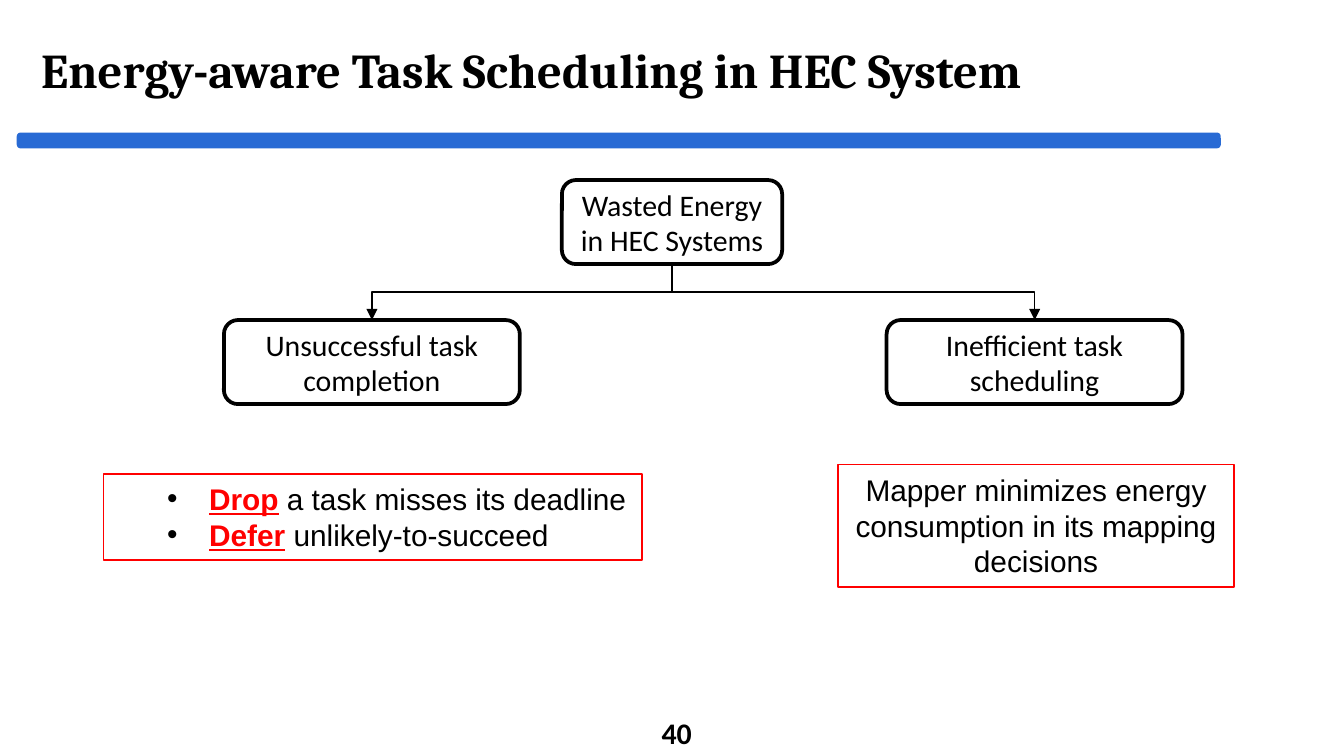
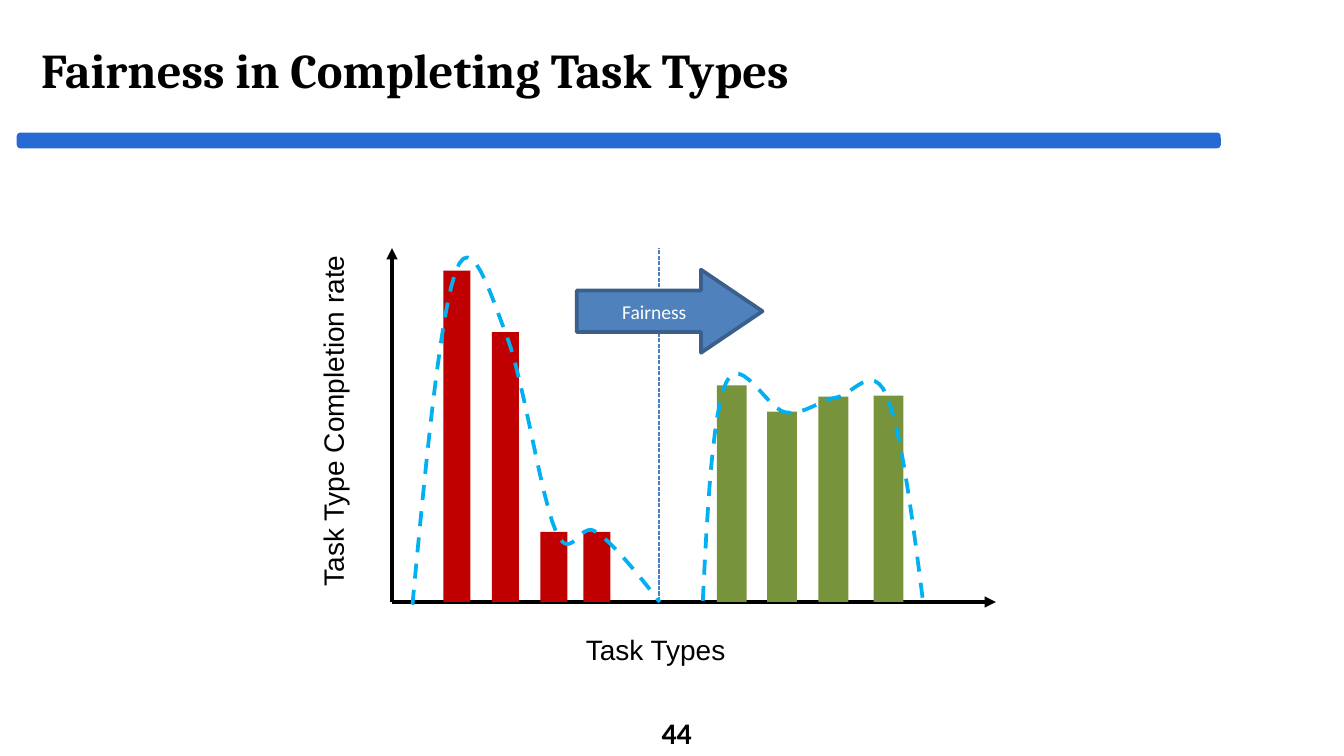
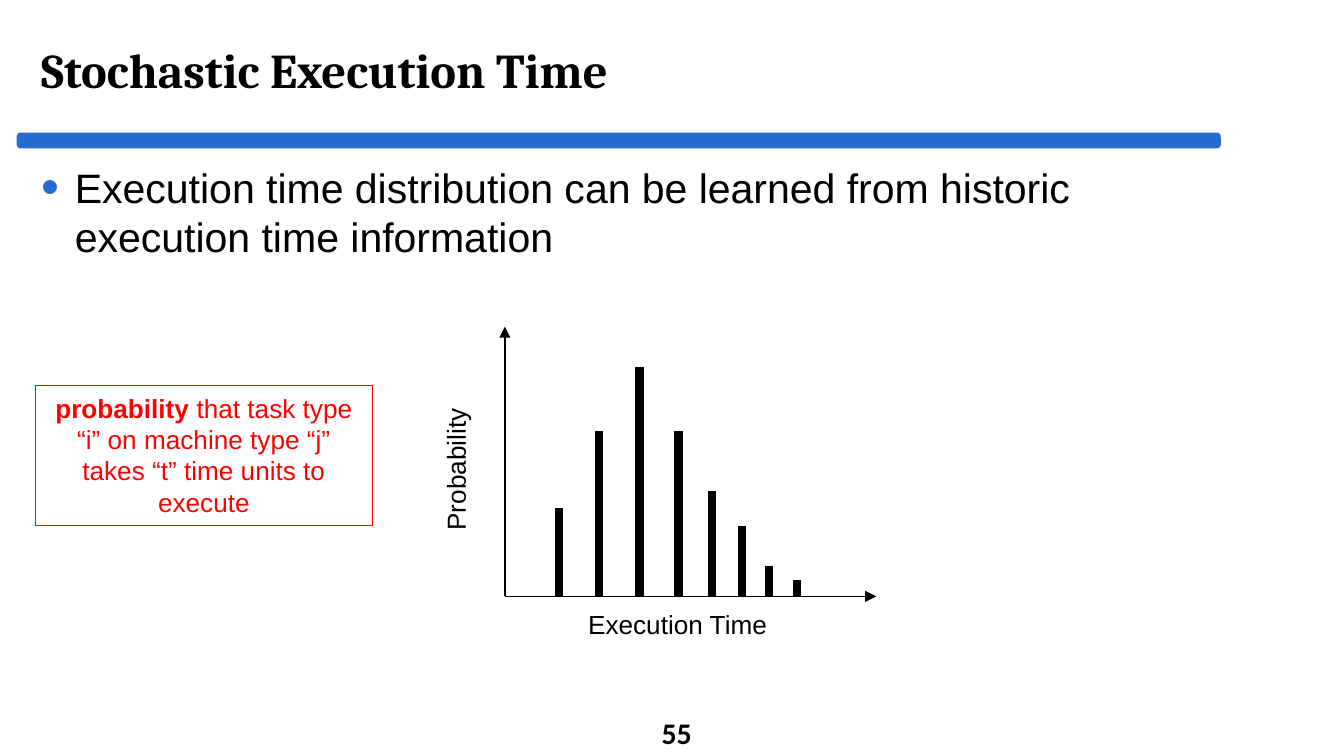
"""Build three slides on energy-aware scheduling, fairness and stochastic execution time."""
from lxml import etree
from pptx import Presentation
from pptx.dml.color import RGBColor
from pptx.enum import dml, shapes, text
from pptx.oxml import ns
from pptx.util import Pt

BLACK = RGBColor(0x00, 0x00, 0x00)
WHITE = RGBColor(0xFF, 0xFF, 0xFF)
RED = RGBColor(0xFF, 0x00, 0x00)
BAND_BLUE = RGBColor(0x28, 0x6A, 0xD4)
ARROW_BLUE = RGBColor(0x4F, 0x81, 0xBD)
ARROW_EDGE = RGBColor(0x3A, 0x5F, 0x8C)
DIVIDER_BLUE = RGBColor(0x4B, 0x7E, 0xBC)
CURVE_BLUE = RGBColor(0x00, 0xB0, 0xF0)
UNFAIR_RED = RGBColor(0xC0, 0x00, 0x00)
FAIR_GREEN = RGBColor(0x77, 0x93, 0x3C)

RECTANGLE = shapes.MSO_SHAPE.RECTANGLE
ROUNDED = shapes.MSO_SHAPE.ROUNDED_RECTANGLE
STRAIGHT = shapes.MSO_CONNECTOR.STRAIGHT
ELBOW = shapes.MSO_CONNECTOR.ELBOW
LEFT, CENTER = text.PP_ALIGN.LEFT, text.PP_ALIGN.CENTER
TOP, MIDDLE = text.MSO_ANCHOR.TOP, text.MSO_ANCHOR.MIDDLE


def add_box(slide, kind, bounds, words="", font="Arial", size=16, color=BLACK, bold=False,
            align=CENTER, anchor=TOP, fill=None, line=None, width=2):
    """Add a preset shape, or a text box when kind is None, with its text."""
    bounds = [Pt(value) for value in bounds]
    if kind is None:
        shape = slide.shapes.add_textbox(*bounds)
    else:
        shape = slide.shapes.add_shape(kind, *bounds)
        shape.shadow.inherit = False
        if fill is None:
            shape.fill.background()
        else:
            shape.fill.solid()
            shape.fill.fore_color.rgb = fill
        if line is None:
            shape.line.fill.background()
        else:
            shape.line.color.rgb = line
            shape.line.width = Pt(width)
    frame = shape.text_frame
    frame.word_wrap = True
    frame.vertical_anchor = anchor
    if words:
        frame.text = words
    for paragraph in frame.paragraphs:
        paragraph.alignment = align
        for run in paragraph.runs:
            run.font.name, run.font.size, run.font.bold = font, Pt(size), bold
            run.font.color.rgb = color
    return shape


def add_line(slide, ends, width, color=BLACK, arrow=False, kind=STRAIGHT):
    """Add a connector without shadow, with an optional arrowhead at its end."""
    connector = slide.shapes.add_connector(kind, *[Pt(value) for value in ends])
    connector.line.color.rgb = color
    connector.line.width = Pt(width)
    if arrow:
        etree.SubElement(connector.line._get_or_add_ln(), ns.qn("a:tailEnd"), type="triangle")
    etree.SubElement(connector._element.spPr, ns.qn("a:effectLst"))
    return connector


presentation = Presentation()
presentation.slide_width, presentation.slide_height = Pt(720), Pt(405)

slides = []
for title, number in [
    ("Energy-aware Task Scheduling in HEC System", "40"),
    ("Fairness in Completing Task Types", "44"),
    ("Stochastic Execution Time", "55"),
]:
    slide = presentation.slides.add_slide(presentation.slide_layouts[6])
    add_box(slide, ROUNDED, (10, 72, 643, 6.5), fill=BAND_BLUE, line=BAND_BLUE)
    add_box(slide, None, (15, 7, 641, 60), title, "Cambria", 26, bold=True,
            align=LEFT, anchor=MIDDLE)
    add_box(slide, None, (278.5, 381.5, 168, 21.5), number, "Calibri", bold=True, anchor=MIDDLE)
    slides.append(slide)
energy_slide, fairness_slide, stochastic_slide = slides

root, unsuccessful, inefficient = [
    add_box(energy_slide, ROUNDED, (left, top, width, 45), words, "Calibri",
            anchor=MIDDLE, line=BLACK)
    for left, top, width, words in [
        (301, 96.5, 118, "Wasted Energy in HEC Systems"),
        (120, 171.5, 158.5, "Unsuccessful task completion"),
        (475, 171.5, 158.5, "Inefficient task scheduling"),
    ]
]
for cause, rotation, flip in [(unsuccessful, 90, "0"), (inefficient, 270, "1")]:
    branch = add_line(energy_slide, (0, 0, 0, 0), 0.75, arrow=True, kind=ELBOW)
    branch.begin_connect(root, 2)
    branch.end_connect(cause, 0)
    middle_x = (branch.begin_x + branch.end_x) // 2
    middle_y = (branch.begin_y + branch.end_y) // 2
    span, drop = branch.width, branch.height
    branch.left, branch.top = middle_x - drop // 2, middle_y - span // 2
    branch.width, branch.height = drop, span
    transform = branch._element.spPr.xfrm
    transform.set("rot", str(rotation * 60000))
    transform.set("flipH", flip)

remedies = add_box(energy_slide, RECTANGLE, (55.5, 254, 288.5, 46), "Drop\nDefer", color=RED,
                   bold=True, align=LEFT, line=RED, width=0.75)
for paragraph, ending in zip(remedies.text_frame.paragraphs,
                             [" a task misses its deadline", " unlikely-to-succeed"]):
    paragraph.level = 1
    paragraph.runs[0].font.underline = True
    run = paragraph.add_run()
    run.text = ending
    run.font.name, run.font.size = "Arial", Pt(16)
    run.font.color.rgb = BLACK
add_box(energy_slide, RECTANGLE, (449, 249, 212, 65.5),
        "Mapper minimizes energy consumption in its mapping decisions", line=RED, width=0.75)

BASELINE = 322.5
add_line(fairness_slide, (210, BASELINE, 210, 133), 2, arrow=True)
add_line(fairness_slide, (210, BASELINE, 533.5, BASELINE), 2, arrow=True)
add_box(fairness_slide, None, (283.5, 335.5, 135.5, 25), "Task Types", size=15)
rate_label = add_box(fairness_slide, None, (52, 213, 252.5, 25), "Task Type Completion rate", size=15)
rate_label.rotation = 270
for color, width, bars in [
    (FAIR_GREEN, 16, [(384, 206.5), (411, 220.5), (438.5, 212.5), (468, 212)]),
    (UNFAIR_RED, 14.5, [(237.5, 145), (263.5, 178), (289.5, 285), (312.5, 285)]),
]:
    for left, top in bars:
        add_box(fairness_slide, RECTANGLE, (left, top, width, BASELINE - top), fill=color)
divider = add_line(fairness_slide, (353, 322, 353, 133), 0.75, DIVIDER_BLUE)
divider.line.dash_style = dml.MSO_LINE.SQUARE_DOT

STEPS = 12
for knots in [
    [(376.5, 322), (389, 205), (421, 221), (448, 213), (475, 212), (494.5, 322.5)],
    [(221, 324), (244, 146), (271.5, 180), (298, 285), (319.5, 285), (353.5, 322.5)],
]:
    knots = [complex(*knot) for knot in knots]
    tangents = [(after - before) / 6 for before, after in zip(knots, knots[2:])]
    leaving = [knot + tangent for knot, tangent in zip(knots[1:], tangents)]
    arriving = [knot - tangent for knot, tangent in zip(knots[1:], tangents)]
    leaving.insert(0, (knots[0] + arriving[0]) / 2)
    arriving.append((leaving[-1] + knots[-1]) / 2)
    points = []
    for start, control, next_control, end in zip(knots, leaving, arriving, knots[1:]):
        for step in range(1, STEPS + 1):
            t = step / STEPS
            point = ((1 - t) ** 3 * start + 3 * (1 - t) ** 2 * t * control
                     + 3 * (1 - t) * t ** 2 * next_control + t ** 3 * end)
            points.append((Pt(point.real), Pt(point.imag)))
    builder = fairness_slide.shapes.build_freeform(Pt(knots[0].real), Pt(knots[0].imag))
    builder.add_line_segments(points, close=False)
    curve = builder.convert_to_shape()
    curve.shadow.inherit = False
    curve.fill.background()
    curve.line.color.rgb = CURVE_BLUE
    curve.line.width = Pt(2)
    curve.line.dash_style = dml.MSO_LINE.DASH

fairness_arrow = add_box(fairness_slide, shapes.MSO_SHAPE.RIGHT_ARROW, (309, 144.5, 99.5, 44.5),
                         "Fairness", "Calibri", 10.5, WHITE, anchor=MIDDLE,
                         fill=ARROW_BLUE, line=ARROW_EDGE)
fairness_arrow.adjustments[1] = 0.74

statement = add_box(stochastic_slide, None, (15, 83.5, 641, 111.5),
                    "Execution time distribution can be learned from historic "
                    "execution time information", size=22, align=LEFT)
add_line(stochastic_slide, (270.5, 319.5, 270.5, 175), 0.75, arrow=True)
add_line(stochastic_slide, (270.5, 319.5, 469.5, 319.5), 0.75, arrow=True)
for x, top in [(299.5, 272), (321, 231), (342.5, 196.5), (363.5, 231),
               (381.5, 263), (397.5, 282), (412, 303), (427, 311)]:
    add_line(stochastic_slide, (x, 320, x, top), 4.5)
add_box(stochastic_slide, None, (290, 322.5, 146, 29), "Execution Time", size=14)
probability_label = add_box(stochastic_slide, None, (173.5, 237, 146, 29), "Probability", size=14)
probability_label.rotation = 270
definition = add_box(stochastic_slide, RECTANGLE, (19, 206.5, 180.5, 75), "probability", size=14,
                     color=RED, bold=True, line=RED, width=0.75)
run = definition.text_frame.paragraphs[0].add_run()
run.text = " that task type “i” on machine type “j” takes “t” time units to execute"
run.font.name, run.font.size = "Arial", Pt(14)
run.font.color.rgb = RED

for box, margin, hanging, color, percent in [
    (remedies, 49.5, 22.5, BLACK, 100),
    (statement, 18, 18, BAND_BLUE, 125),
]:
    for paragraph in box.text_frame.paragraphs:
        properties = paragraph._p.get_or_add_pPr()
        properties.set("marL", str(Pt(margin)))
        properties.set("indent", str(-Pt(hanging)))
        bullet_color = etree.SubElement(properties, ns.qn("a:buClr"))
        etree.SubElement(bullet_color, ns.qn("a:srgbClr"), val=str(color))
        etree.SubElement(properties, ns.qn("a:buSzPct"), val=str(percent * 1000))
        etree.SubElement(properties, ns.qn("a:buFont"), typeface="Arial")
        etree.SubElement(properties, ns.qn("a:buChar"), char="•")

presentation.save("out.pptx")
